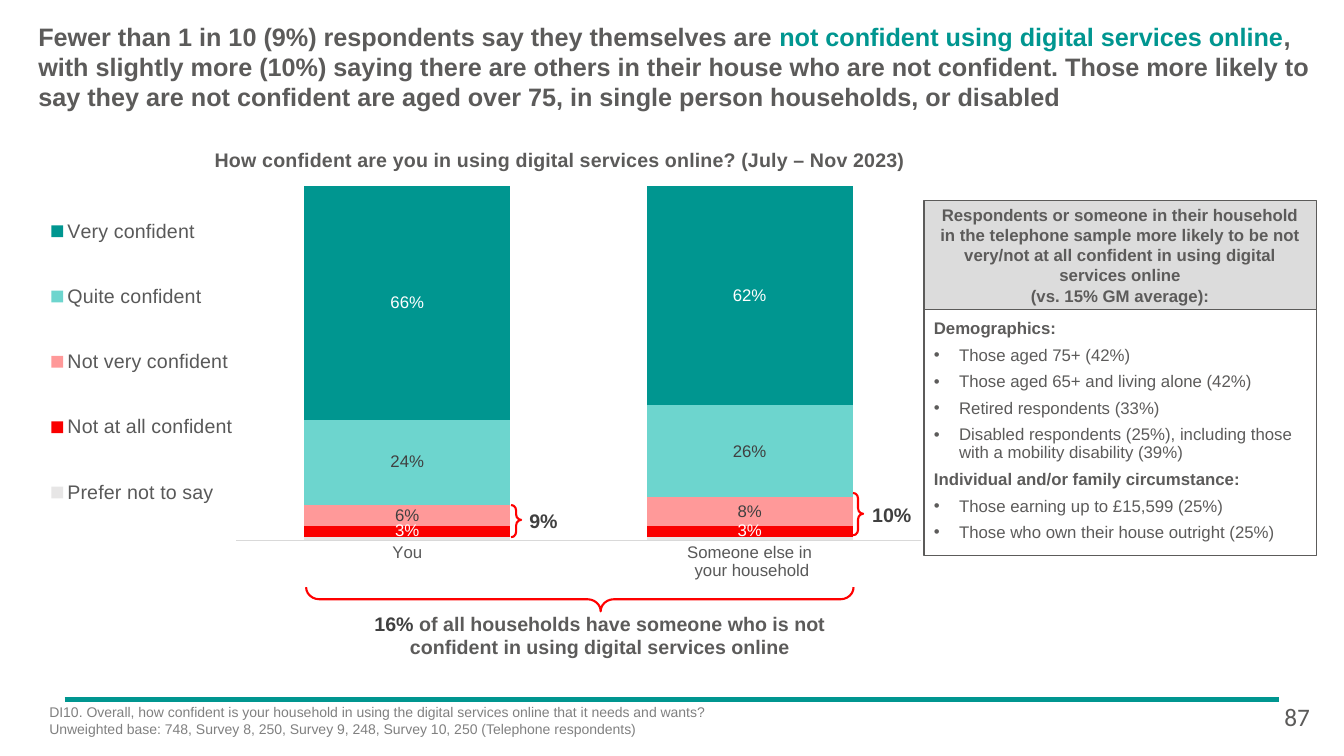
"""Build the slide on confidence in using digital services online."""
from lxml import etree
from pptx import Presentation, util as u
from pptx.chart.data import CategoryChartData
from pptx.dml.color import RGBColor
from pptx.enum import chart as ch, shapes, text
from pptx.oxml import parse_xml
from pptx.oxml.ns import nsdecls, qn

THEME = {
    "font": "Arial", "num": "Calibri",
    "grey": "5C5B5A", "dark": "404040", "axis": "595959", "rule": "D9D9D9",
    "note": "808080", "teal": "009690", "mint": "6DD5CE", "pink": "FF9999",
    "red": "FA0000", "pale": "E7E6E6", "brace": "FF0000", "white": "FFFFFF",
    "big": 18, "mid": 14, "body": 12, "small": 10,
}
TITLE = [[
    ("Fewer than 1 in 10 (9%) respondents say they themselves are ", "grey"),
    ("not confident using digital services online", "teal"),
    (", with slightly more (10%) saying there are others in their house who are "
     "not confident. Those more likely to say they are not confident are aged "
     "over 75, in single person households, or disabled", "grey"),
]]
ASK = "How confident are you in using digital services online? (July – Nov 2023)"
GROUPS = ["Someone else in\n your household", "You"]
SERIES = [
    ("Prefer not to say", (0.01, 0.01), "pale", None),
    ("Not at all confident", (0.03, 0.03), "red", "white"),
    ("Not very confident", (0.08, 0.06), "pink", "dark"),
    ("Quite confident", (0.26, 0.24), "mint", "dark"),
    ("Very confident", (0.62, 0.66), "teal", "white"),
]
HEAD = [
    [("Respondents or someone in their household in the telephone sample more "
      "likely to be not very/not at all confident in using digital services online", "grey")],
    [("(vs. 15% GM average):", "grey")],
]
FACTS = [
    ("Demographics:", ["Those aged 75+ (42%)", "Those aged 65+ and living alone (42%)",
                       "Retired respondents (33%)",
                       "Disabled respondents (25%), including those with a mobility disability (39%)"]),
    ("Individual and/or family circumstance:", ["Those earning up to £15,599 (25%)",
                                                "Those who own their house outright (25%)"]),
]
TOTAL = [[("16% ", "dark"),
          ("of all households have someone who is not confident in using digital services online", "grey")]]
NOTES = [
    [("DI10. Overall, how confident is your household in using the digital services "
      "online that it needs and wants?", "note")],
    [("Unweighted base: 748, Survey 8, 250, Survey 9, 248, Survey 10, 250 (Telephone respondents)", "note")],
]
BRACES = [((38.03, 66.8, 0.75, 4.27), 0.462, 0), ((63.47, 65.2, 0.75, 5.6), 0.493, 0),
          ((42.24, 43.07, 1.8, 72.4), 0.462, 90)]
MARKS = [("9%", (39.38, 67.33, 3.2, 3.2)), ("10%", (64.89, 66.53, 3.2, 3.2))]
SIDE, TOP, WIDE, CAP, LIST = 68.75, 26.5, 29.18, 14.5, 32.53

deck = Presentation()
deck.slide_width, deck.slide_height = u.Inches(13.33), u.Inches(7.5)
slide = deck.slides.add_slide(deck.slide_layouts[6])


def hue(name):
    return RGBColor.from_string(THEME[name])


def spot(left, top, wide, high):
    """Turn percentages of the slide into lengths."""
    across, down = deck.slide_width / 100, deck.slide_height / 100
    return [round(n) for n in (left * across, top * down, wide * across, high * down)]


def style(font, size, color, bold=False, face="font"):
    font.name, font.size, font.bold = THEME[face], u.Pt(THEME[size]), bold
    font.color.rgb = hue(color)


def write(shape, paras, size, bold=False, pad=None, align=None, face="font", wrap=True):
    frame = shape.text_frame
    frame.word_wrap = wrap
    frame.vertical_anchor = text.MSO_ANCHOR.TOP
    if pad is not None:
        frame.margin_left = frame.margin_right = u.Inches(pad)
        frame.margin_top = frame.margin_bottom = u.Inches(pad)
    for i, runs in enumerate(paras):
        para = frame.add_paragraph() if i else frame.paragraphs[0]
        para.alignment = align or text.PP_ALIGN.LEFT
        for words, color in runs:
            run = para.add_run()
            run.text = words
            style(run.font, size, color, bold, face)
    return frame


def label(place, paras, size, **look):
    return write(slide.shapes.add_textbox(*spot(*place)), paras, size, **look)


def outline(kind, place, color, width):
    shape = slide.shapes.add_shape(kind, *spot(*place))
    shape.shadow.inherit = False
    shape.line.color.rgb = hue(color)
    shape.line.width = u.Pt(width)
    return shape


def panel(place, fill):
    box = outline(shapes.MSO_SHAPE.RECTANGLE, place, "grey", 0.75)
    box.fill.solid()
    box.fill.fore_color.rgb = hue(fill)
    return box


def layout(node, index, inner=False, **parts):
    """Give a chart part a fixed place, in shares of the chart."""
    for old in node.findall(qn("c:layout")):
        node.remove(old)
    tags = '<c:layoutTarget val="inner"/>' if inner else ""
    tags += "".join(f'<c:{k}Mode val="edge"/>' for k in "xy")
    tags += "".join(f'<c:{k} val="{v}"/>' for k, v in parts.items())
    node.insert(index, parse_xml(
        f'<c:layout {nsdecls("c")}><c:manualLayout>{tags}</c:manualLayout></c:layout>'))


def plot():
    data = CategoryChartData(number_format="0%")
    data.categories = GROUPS
    for name, vals, *_ in SERIES:
        data.add_series(name, vals)
    chart = slide.shapes.add_chart(ch.XL_CHART_TYPE.COLUMN_STACKED,
                                   *spot(2.1, 14.4, 66.69, 64.4), data).chart
    style(chart.font, "small", "axis")
    chart.has_title = True
    title = chart.chart_title.text_frame
    title.text = ASK
    style(title.paragraphs[0].runs[0].font, "mid", "grey", True)
    layout(chart.chart_title._element, 1, x=0.204, y=0.072)
    chart.has_legend = True
    legend = chart.legend
    legend.position = ch.XL_LEGEND_POSITION.LEFT
    legend.include_in_layout = False
    style(legend.font, "mid", "axis")
    layout(legend._element, 1, x=0.012, y=0.14, w=0.23, h=0.76)
    layout(chart._chartSpace.chart.plotArea, 0, True, x=0.232, y=0.012, w=0.764, h=0.874)
    cats, vals = chart.category_axis, chart.value_axis
    cats.reverse_order = True
    cats.major_tick_mark = ch.XL_TICK_MARK.NONE
    style(cats.tick_labels.font, "body", "axis")
    cats.format.line.color.rgb = hue("rule")
    cats.format.line.width = u.Pt(0.75)
    vals.minimum_scale, vals.maximum_scale = 0, 1.2
    vals.has_major_gridlines = vals.visible = False
    bars = chart.plots[0]
    bars.gap_width, bars.overlap, bars.vary_by_categories = 66, 100, False
    for bar, (_, _, fill, ink) in zip(bars.series, SERIES):
        bar.format.fill.solid()
        bar.format.fill.fore_color.rgb = hue(fill)
        if ink:
            tags = bar.data_labels
            tags.show_value = True
            tags.number_format, tags.number_format_is_linked = "0%", False
            tags.position = ch.XL_LABEL_POSITION.CENTER
            style(tags.font, "body", ink)


def facts():
    head = panel((SIDE, TOP, WIDE, CAP), "grey")
    tint = head.fill._xPr.find(qn("a:solidFill"))[0]
    etree.SubElement(tint, qn("a:alpha")).set("val", "21000")
    frame = write(head, HEAD, "body", bold=True, align=text.PP_ALIGN.CENTER)
    frame.vertical_anchor = text.MSO_ANCHOR.MIDDLE
    rows = [(words, i > 0) for name, items in FACTS for i, words in enumerate([name, *items])]
    body = write(panel((SIDE, TOP + CAP, WIDE, LIST), "white"),
                 [[(words, "grey")] for words, _ in rows], "body", pad=0.1)
    for para, (_, item) in zip(body.paragraphs, rows):
        para.line_spacing = 0.9
        para.space_before = para.space_after = u.Pt(3)
        para.runs[0].font.bold = not item
        if item:
            props = para._p.get_or_add_pPr()
            props.set("marL", str(u.Inches(0.25)))
            props.set("indent", str(-u.Inches(0.25)))
            etree.SubElement(props, qn("a:buFont")).set("typeface", THEME["font"])
            etree.SubElement(props, qn("a:buChar")).set("char", "•")


left, level, right, _ = spot(4.8, 92.53, 95.2, 0)
rule = slide.shapes.add_connector(shapes.MSO_CONNECTOR.STRAIGHT, left, level, right, level)
rule.line.color.rgb = hue("teal")
rule.line.width = u.Pt(3)
etree.SubElement(rule._element.spPr, qn("a:effectLst"))
label((2.85, 2.8, 95.05, 12.13), TITLE, "big", bold=True, pad=0)
plot()
facts()
label((2.93, 92.4, 91.82, 7.6), NOTES, "small")
label((94.82, 92.13, 3.98, 5.33), [[("87", "grey")]], "big", face="num")
for place, tip, turn in BRACES:
    brace = outline(shapes.MSO_SHAPE.RIGHT_BRACE, place, "brace", 1.5)
    brace.fill.background()
    brace.adjustments[0], brace.adjustments[1] = 0.545, tip
    brace.rotation = turn
for words, place in MARKS:
    label(place, [[(words, "dark")]], "mid", bold=True, pad=0, wrap=False)
label((25.81, 80.93, 37.66, 9.47), TOTAL, "mid", bold=True, pad=0, align=text.PP_ALIGN.CENTER)
deck.save("out.pptx")
